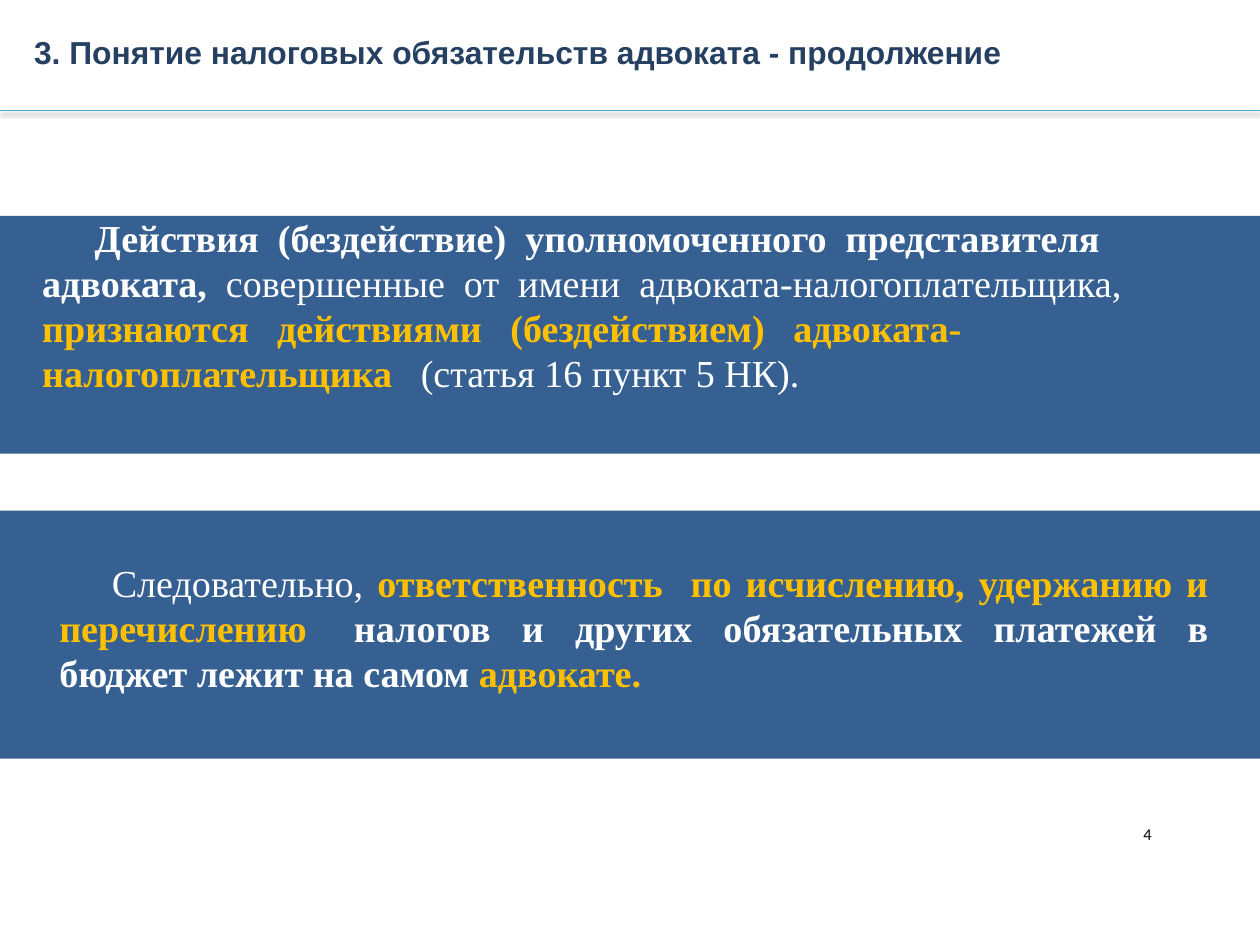
import pptx
import pptx.util
import pptx.dml.color
import pptx.enum.shapes
import pptx.enum.text
import pptx.oxml
import pptx.oxml.ns
from dataclasses import dataclass
from pptx.util import Inches

ALIGN = pptx.enum.text.PP_ALIGN
ANCHOR = pptx.enum.text.MSO_ANCHOR


@dataclass(frozen=True)
class Theme:
    band: str = "376092"
    title: str = "254061"
    rule: str = "4BACC6"
    light: str = "FFFFFF"
    accent: str = "FFC000"
    dark: str = "000000"
    heading_font: str = "Arial"
    body_font: str = "Times New Roman"
    number_font: str = "Calibri"
    heading_size: float = 20
    body_size: float = 24
    number_size: float = 10.4


THEME = Theme()
WIDTH, HEIGHT = 11.03, 8.27


def color(value):
    return pptx.dml.color.RGBColor.from_string(value)


def add_text(slide, left, top, width, height, runs, *, font, size, inset=0,
             align=ALIGN.LEFT, anchor=ANCHOR.TOP, line_spacing=1.0, first_indent=0):
    """Add one paragraph; each run is (text, colour, bold)."""
    box = slide.shapes.add_textbox(Inches(left), Inches(top), Inches(width), Inches(height))
    frame = box.text_frame
    frame.word_wrap = True
    frame.vertical_anchor = anchor
    frame.margin_left = frame.margin_right = Inches(inset)
    frame.margin_top = frame.margin_bottom = Inches(inset / 2)
    paragraph = frame.paragraphs[0]
    paragraph.alignment = align
    paragraph.line_spacing = line_spacing
    if first_indent:
        properties = paragraph._p.get_or_add_pPr()
        properties.set("marL", str(Inches(0.01)))
        properties.set("indent", str(Inches(first_indent)))
    for text, run_color, bold in runs:
        run = paragraph.add_run()
        run.text = text
        run.font.name = font
        run.font.size = pptx.util.Pt(size)
        run.font.bold = bold
        run.font.color.rgb = color(run_color)


def add_band(slide, top, height):
    band = slide.shapes.add_shape(pptx.enum.shapes.MSO_SHAPE.RECTANGLE,
                                  0, Inches(top), Inches(WIDTH), Inches(height))
    band.shadow.inherit = False
    band.fill.solid()
    band.fill.fore_color.rgb = color(THEME.band)
    band.line.fill.background()


def add_rule(slide, top):
    rule = slide.shapes.add_connector(pptx.enum.shapes.MSO_CONNECTOR.STRAIGHT,
                                      0, Inches(top), Inches(WIDTH), Inches(top))
    rule.line.color.rgb = color(THEME.rule)
    rule.line.width = pptx.util.Pt(0.5)
    # Soft shadow straight below the rule
    blur, distance = pptx.util.Pt(3.1), pptx.util.Pt(1.8)
    rule._element.spPr.append(pptx.oxml.parse_xml(
        f'<a:effectLst {pptx.oxml.ns.nsdecls("a")}>'
        f'<a:outerShdw blurRad="{blur}" dist="{distance}" dir="5400000" rotWithShape="0">'
        f'<a:srgbClr val="{THEME.dark}"><a:alpha val="35000"/></a:srgbClr>'
        '</a:outerShdw></a:effectLst>'))


def add_statement(slide, left, top, height, runs, align):
    add_text(slide, left, top, 10.07, height, runs, font=THEME.body_font,
             size=THEME.body_size, align=align, line_spacing=0.99, first_indent=0.46)


def main():
    presentation = pptx.Presentation()
    presentation.slide_width = Inches(WIDTH)
    presentation.slide_height = Inches(HEIGHT)
    slide = presentation.slides.add_slide(presentation.slide_layouts[6])

    # Heading
    add_rule(slide, 0.97)
    add_text(slide, 0.2, 0, 9.39, 0.67,
             [("3. Понятие налоговых обязательств адвоката - продолжение", THEME.title, True)],
             font=THEME.heading_font, size=THEME.heading_size, inset=0.1,
             anchor=ANCHOR.BOTTOM, line_spacing=0.9)

    # Actions of the representative
    add_band(slide, 1.89, 2.08)
    add_statement(slide, 0.36, 1.89, 1.55, [
        ("Действия  (бездействие)  уполномоченного  представителя адвоката,  ", THEME.light, True),
        ("совершенные  от  имени  адвоката-налогоплательщика,  ", THEME.light, False),
        ("признаются   действиями   (бездействием)   адвоката-налогоплательщика   ",
         THEME.accent, True),
        ("(статья 16 пункт 5 НК).", THEME.light, False),
    ], ALIGN.LEFT)

    # Responsibility of the advocate
    add_band(slide, 4.47, 2.17)
    add_statement(slide, 0.51, 4.91, 1.2, [
        ("Следовательно, ", THEME.light, False),
        ("ответственность  по исчислению, удержанию и перечислению   ", THEME.accent, True),
        ("налогов  и  других  обязательных  платежей  в бюджет лежит на самом ",
         THEME.light, True),
        ("адвокате.", THEME.accent, True),
    ], ALIGN.JUSTIFY)

    # Page number
    add_text(slide, 10.01, 7.23, 0.15, 0.15, [("4", THEME.dark, False)],
             font=THEME.number_font, size=THEME.number_size,
             line_spacing=pptx.util.Pt(10.8))

    presentation.save("out.pptx")


if __name__ == "__main__":
    main()
